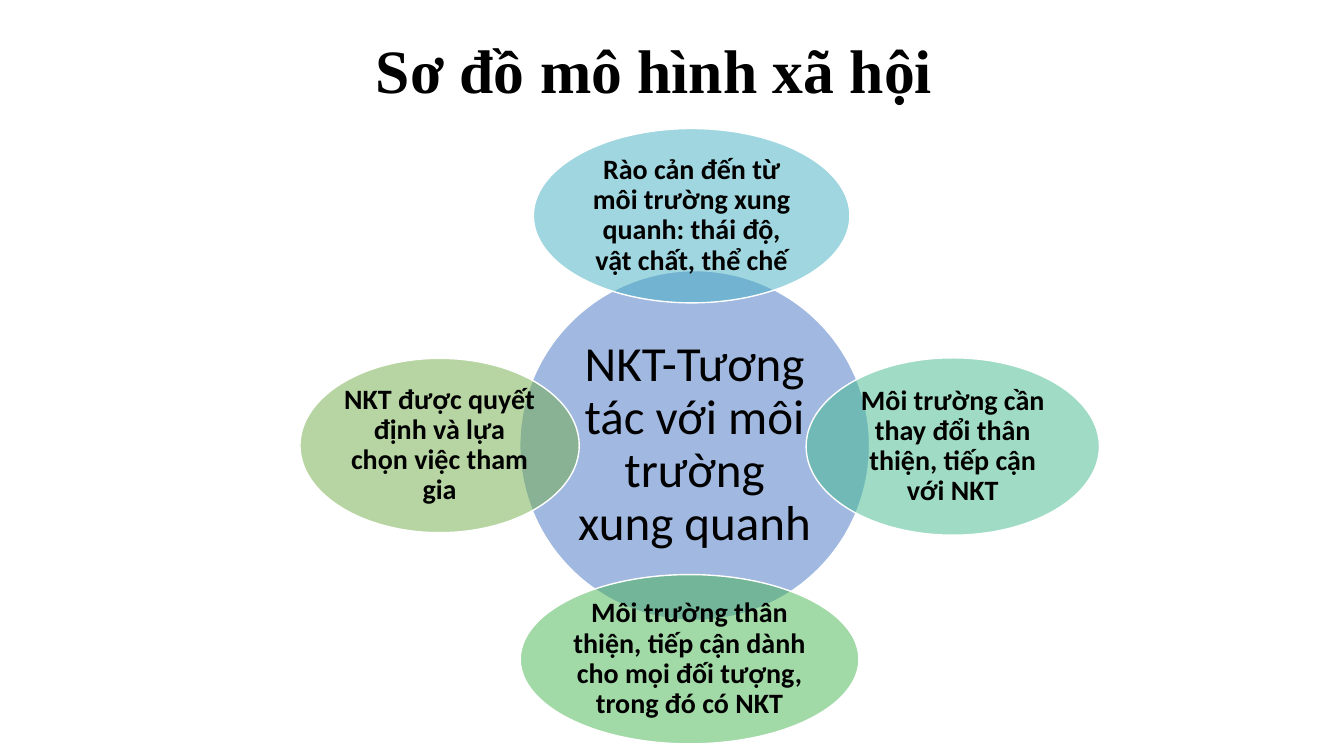
from pptx import Presentation
from pptx.dml.color import RGBColor
from pptx.enum.shapes import MSO_SHAPE as Shape
from pptx.enum.text import MSO_ANCHOR as Anchor, MSO_AUTO_SIZE as AutoSize, PP_ALIGN as Align
from pptx.oxml.ns import qn
from pptx.util import Inches, Pt
from lxml.etree import SubElement

TITLE = "Sơ đồ mô hình xã hội"
COLORS = {
    "ink": "000000", "outline": "FFFFFF", "center": "4472C4", "top": "43AFC0",
    "right": "43BB8D", "bottom": "45B451", "left": "70AD47",
}
CENTER_STYLE = {"size": 35, "inset": 0.05}
PETAL_STYLE = {"size": 20, "inset": 0.03, "bold": True}
ELLIPSES = [
    ("center", (6.89, 4.42), (3.47, 3.47), CENTER_STYLE,
     "NKT-Tương tác với môi trường xung quanh"),
    ("top", (6.86, 2.14), (3.14, 1.73), PETAL_STYLE,
     "Rào cản đến từ môi trường xung quanh: thái độ, vật chất, thể chế"),
    ("right", (9.45, 4.43), (2.91, 1.76), PETAL_STYLE,
     "Môi trường cần thay đổi thân thiện, tiếp cận với NKT"),
    ("bottom", (6.84, 6.54), (3.36, 1.68), PETAL_STYLE,
     "Môi trường thân thiện, tiếp cận dành cho mọi đối tượng, trong đó có NKT"),
    ("left", (4.36, 4.42), (2.77, 1.73), PETAL_STYLE,
     "NKT được quyết định và lựa chọn việc tham gia"),
]


def color(name):
    return RGBColor.from_string(COLORS[name])


def write(shape, text, size, font="Calibri", bold=False, inset=0.1):
    frame = shape.text_frame
    frame.text = text
    frame.word_wrap = True
    frame.auto_size = AutoSize.NONE
    frame.vertical_anchor = Anchor.MIDDLE
    frame.margin_left = frame.margin_right = Inches(inset)
    frame.margin_top = frame.margin_bottom = Inches(min(inset, 0.05))
    para = frame.paragraphs[0]
    para.alignment = Align.CENTER
    para.line_spacing = 0.9
    span = para.runs[0].font
    span.name, span.size, span.bold = font, Pt(size), bold
    span.color.rgb = color("ink")


def add_ellipse(page, name, middle, size, style, text):
    corner = [Inches(m - s / 2) for m, s in zip(middle, size)]
    shape = page.shapes.add_shape(Shape.OVAL, *corner, *map(Inches, size))
    shape.shadow.inherit = False
    shape.fill.solid()
    shape.fill.fore_color.rgb = color(name)
    fill = shape.fill._xPr.find(qn("a:solidFill"))
    SubElement(fill[0], qn("a:alpha"), val="50000")
    shape.line.color.rgb = color("outline")
    shape.line.width = Pt(1)
    write(shape, text, **style)


def main():
    deck = Presentation()
    deck.slide_width, deck.slide_height = Inches(13.33), Inches(7.5)
    page = deck.slides.add_slide(deck.slide_layouts[5])
    title = page.shapes.title
    title.left, title.top = Inches(0.74), Inches(0)
    title.width, title.height = Inches(11.5), Inches(1.45)
    write(title, TITLE, 44, font="Times New Roman", bold=True)
    for ellipse in ELLIPSES:
        add_ellipse(page, *ellipse)
    deck.save("out.pptx")


if __name__ == "__main__":
    main()
